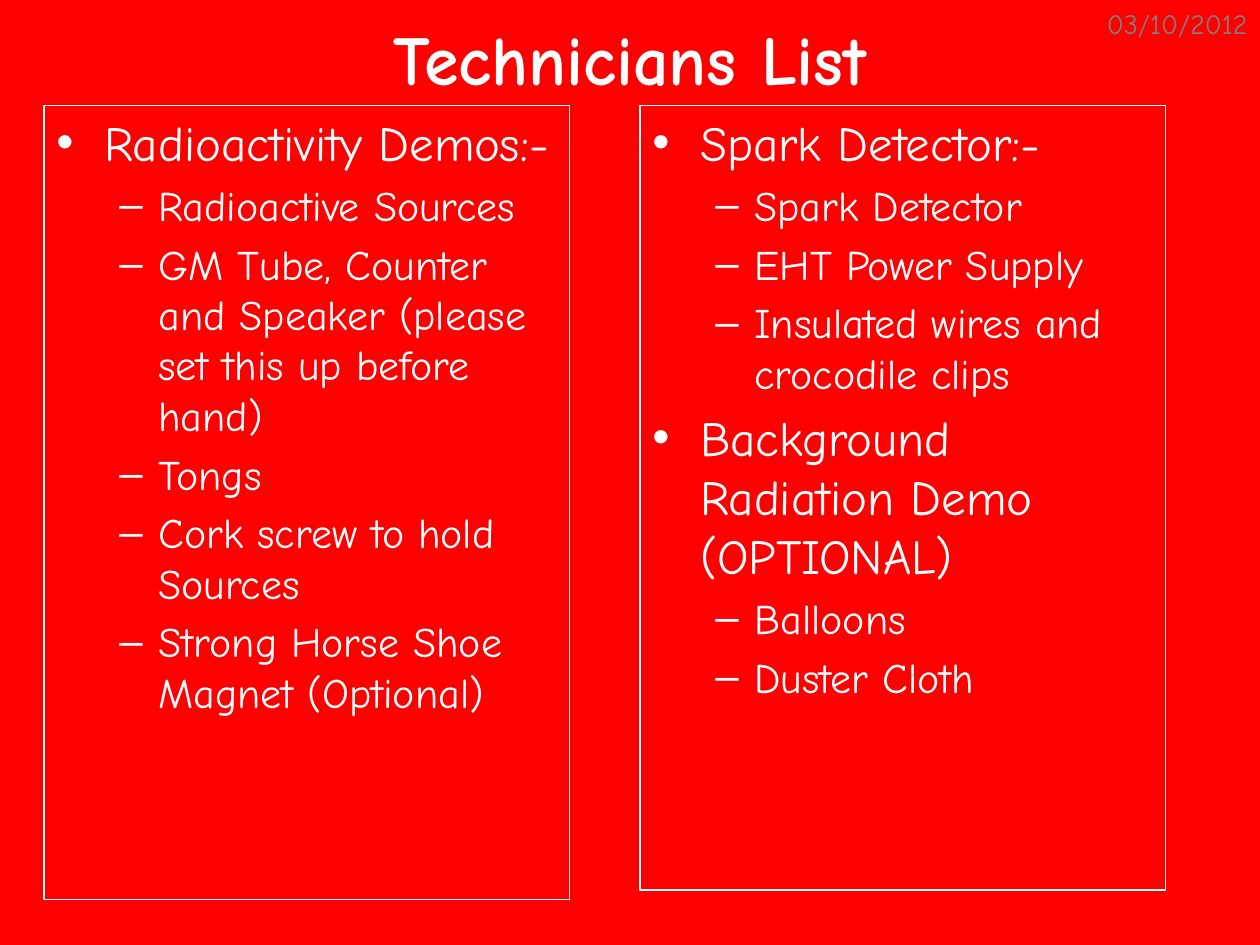
from lxml import etree
from pptx import Presentation, util as u
from pptx.dml.color import RGBColor
from pptx.enum import shapes, text
from pptx.oxml.ns import qn

WIDTH, HEIGHT = u.Inches(10), u.Inches(7.5)
WHITE, RED, GREY = "FFFFFF", "FF0000", "808080"


def color(value):
    return RGBColor.from_string(value)


def write(paragraph, words, size, shade=WHITE, bold=False):
    run = paragraph.add_run()
    run.text = words
    run.font.color.rgb = color(shade)
    formats = {"name": "Comic Neue", "size": u.Pt(size), "bold": bold}
    for name, value in formats.items():
        setattr(run.font, name, value)


presentation = Presentation()
presentation.slide_width, presentation.slide_height = WIDTH, HEIGHT
slide = presentation.slides.add_slide(presentation.slide_layouts[6])
slide.background.fill.solid()
slide.background.fill.fore_color.rgb = color(RED)

headings = [
    ("Technicians List", 0, 1, 0.92 / 7.5, 40, WHITE, True,
     text.PP_ALIGN.CENTER, text.MSO_ANCHOR.MIDDLE),
    ("03/10/2012", 0.792, 0.208, 0.5 / 7.5, 16, GREY, False,
     text.PP_ALIGN.RIGHT, text.MSO_ANCHOR.TOP),
]
for words, left, width, height, size, shade, bold, alignment, anchor in headings:
    box = slide.shapes.add_textbox(
        int(left * WIDTH), 0, int(width * WIDTH), int(height * HEIGHT))
    box.text_frame.word_wrap = True
    box.text_frame.vertical_anchor = anchor
    paragraph = box.text_frame.paragraphs[0]
    paragraph.alignment = alignment
    write(paragraph, words, size, shade, bold)

levels = [
    {"size": 28, "margin": 0.38, "indent": -0.38, "bullet": "•"},
    {"size": 24, "margin": 0.81, "indent": -0.31, "bullet": "–"},
]
lists = [
    (0.035, 0.84, [
        (0, "Radioactivity Demos:-"),
        (1, "Radioactive Sources"),
        (1, "GM Tube, Counter and Speaker (please set this up before hand)"),
        (1, "Tongs"),
        (1, "Cork screw to hold Sources"),
        (1, "Strong Horse Shoe Magnet (Optional)"),
    ]),
    (0.508, 0.83, [
        (0, "Spark Detector:-"),
        (1, "Spark Detector"),
        (1, "EHT Power Supply"),
        (1, "Insulated wires and crocodile clips"),
        (0, "Background Radiation Demo (OPTIONAL)"),
        (1, "Balloons"),
        (1, "Duster Cloth"),
    ]),
]
for left, height, items in lists:
    panel = slide.shapes.add_shape(
        shapes.MSO_SHAPE.RECTANGLE, int(left * WIDTH), int(0.112 * HEIGHT),
        int(0.417 * WIDTH), int(height * HEIGHT))
    panel.shadow.inherit = False
    panel.fill.background()
    panel.line.color.rgb = color(WHITE)
    panel.line.width = u.Pt(0.75)
    frame = panel.text_frame
    frame.word_wrap = True
    frame.vertical_anchor = text.MSO_ANCHOR.TOP
    for number, (level, words) in enumerate(items):
        paragraph = frame.add_paragraph() if number else frame.paragraphs[0]
        style = levels[level]
        formats = {"level": level, "alignment": text.PP_ALIGN.LEFT,
                   "space_before": u.Pt(0.2 * style["size"])}
        for name, value in formats.items():
            setattr(paragraph, name, value)
        properties = paragraph._p.get_or_add_pPr()
        properties.set("marL", str(u.Inches(style["margin"])))
        properties.set("indent", str(u.Inches(style["indent"])))
        etree.SubElement(properties, qn("a:buFont")).set("typeface", "Arial")
        etree.SubElement(properties, qn("a:buChar")).set("char", style["bullet"])
        write(paragraph, words, style["size"])

presentation.save("out.pptx")
